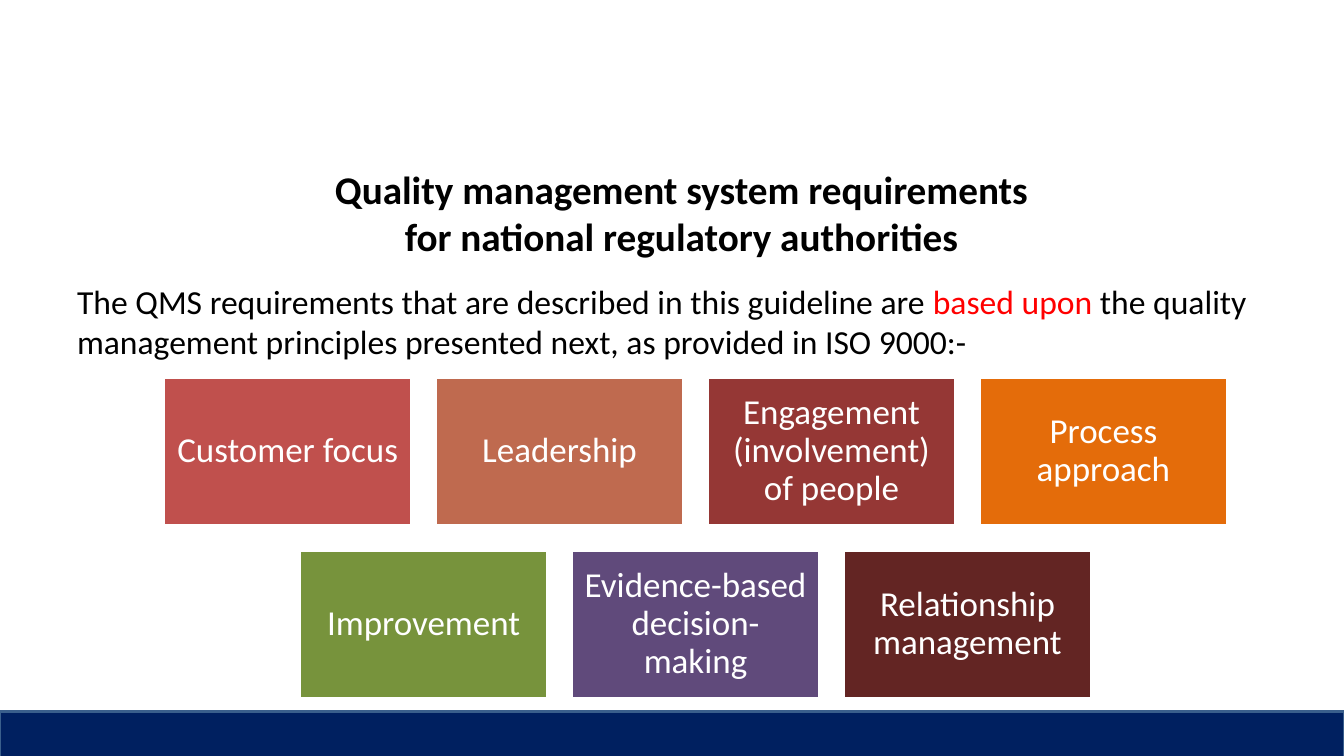
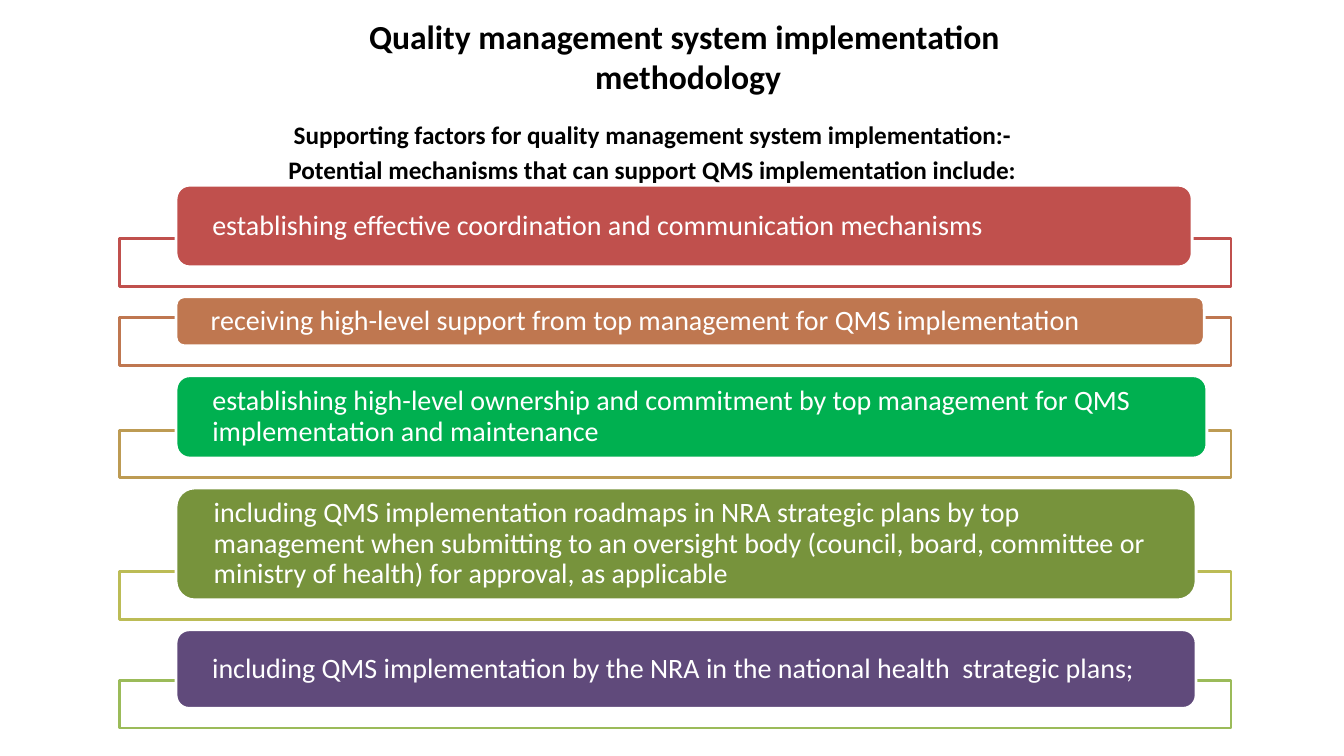
from pptx import Presentation
from pptx.dml.color import RGBColor
from pptx.enum.shapes import MSO_SHAPE
from pptx.enum.text import MSO_ANCHOR, PP_ALIGN
from pptx.util import Inches, Pt

# Boxes are (left, top, width, height) in hundredths of the slide's size.
SLIDE_W, SLIDE_H = Inches(13.33), Inches(7.5)
FONT = "Calibri"
BLACK, WHITE, RED = "000000", "FFFFFF", "FF0000"
NAVY, STEEL = "002060", "3A5F8C"

PRINCIPLES = [
    [("Customer focus", "C0504D"),
     ("Leadership", "BF6A4F"),
     ("Engagement (involvement) of people", "953735"),
     ("Process approach", "E46C0A")],
    [("Improvement", "77933C"),
     ("Evidence-based decision-making", "604A7B"),
     ("Relationship management", "632523")],
]

# Text, bar colour, frame colour, bar width, bar height
MECHANISMS = [
    ("establishing effective coordination and communication mechanisms",
     "C0504D", "C0504D", 75.6, 10.8),
    ("receiving high-level support from top management for QMS implementation",
     "BF7750", "BF7750", 76.5, 6.5),
    ("establishing high-level ownership and commitment by top management for QMS "
     "implementation and maintenance",
     "00B050", "BD9B53", 76.7, 10.9),
    ("including QMS implementation roadmaps in NRA strategic plans by top "
     "management when submitting to an oversight body (council, board, committee or "
     "ministry of health) for approval, as applicable",
     "77933C", "BCBC56", 75.9, 14.8),
    ("including QMS implementation by the NRA in the national health  strategic plans;",
     "604A7B", "9BBB59", 75.9, 10.4),
]


def rgb(color):
    return RGBColor.from_string(color)


def place(box):
    x, y, w, h = box
    return (round(SLIDE_W * x / 100), round(SLIDE_H * y / 100),
            round(SLIDE_W * w / 100), round(SLIDE_H * h / 100))


def add_run(p, text, size, color=BLACK, bold=False):
    r = p.add_run()
    r.text = text
    r.font.name = FONT
    r.font.size = Pt(size)
    r.font.bold = bold
    r.font.color.rgb = rgb(color)


def add_text_box(s, box, anchor=MSO_ANCHOR.TOP):
    tf = s.shapes.add_textbox(*place(box)).text_frame
    tf.word_wrap = True
    tf.vertical_anchor = anchor
    return tf


def add_block(s, kind, box, fill, line=WHITE):
    sp = s.shapes.add_shape(kind, *place(box))
    sp.shadow.inherit = False
    sp.fill.solid()
    sp.fill.fore_color.rgb = rgb(fill)
    sp.line.color.rgb = rgb(line)
    sp.line.width = Pt(2)
    return sp


def add_label(sp, text, size, align, side, edge):
    """Write white text in a shape, with insets at its sides and its top and bottom."""
    tf = sp.text_frame
    tf.word_wrap = True
    tf.vertical_anchor = MSO_ANCHOR.MIDDLE
    tf.margin_left = tf.margin_right = Inches(side)
    tf.margin_top = tf.margin_bottom = Inches(edge)
    p = tf.paragraphs[0]
    p.alignment = align
    p.line_spacing = 0.9
    add_run(p, text, size, WHITE)


def add_title(s, box, lines, size):
    p = add_text_box(s, box, MSO_ANCHOR.MIDDLE).paragraphs[0]
    p.alignment = PP_ALIGN.CENTER
    for i, line in enumerate(lines):
        if i:
            p.add_line_break()
        add_run(p, line, size, bold=True)


def add_body(s, box, paragraphs, size, align=PP_ALIGN.LEFT, bold=False):
    """Write paragraphs, each a list of (text, colour) runs."""
    tf = add_text_box(s, box)
    for i, runs in enumerate(paragraphs):
        p = tf.add_paragraph() if i else tf.paragraphs[0]
        p.alignment = align
        p.space_before = Pt(size * 0.2)
        for text, color in runs:
            add_run(p, text, size, color, bold)


def add_principle_grid(s, box, rows, cell_w=18.4, cell_h=19.6):
    """Spread the rows over the box, with each row centred in it."""
    x, y, w, h = box
    columns = max(len(row) for row in rows)
    step_x = (w - cell_w) / (columns - 1)
    step_y = (h - cell_h) / (len(rows) - 1)
    for i, row in enumerate(rows):
        left = x + (columns - len(row)) * step_x / 2
        for j, (text, color) in enumerate(row):
            cell = (left + j * step_x, y + i * step_y, cell_w, cell_h)
            sp = add_block(s, MSO_SHAPE.RECTANGLE, cell, color)
            add_label(sp, text, 25, PP_ALIGN.CENTER, 0.1, 0.1)


def add_mechanism_list(s, box, items, indent=4.2, frame_h=6.3, overlap=3.7):
    """Stack bars at equal gaps, each overlapping the top of its outlined frame."""
    x, y, w, h = box
    bars_h = sum(item[-1] for item in items)
    gap = (h - bars_h - (frame_h - overlap)) / (len(items) - 1)
    for text, color, frame_color, bar_w, bar_h in items:
        frame = (x, y + bar_h - overlap, w, frame_h)
        add_block(s, MSO_SHAPE.RECTANGLE, frame, WHITE, frame_color)
        bar = (x + indent, y, bar_w, bar_h)
        sp = add_block(s, MSO_SHAPE.ROUNDED_RECTANGLE, bar, color)
        add_label(sp, text, 20, PP_ALIGN.LEFT, 0.32, 0)
        y += bar_h + gap


def build_principles(s):
    add_title(s, (5.7, 19.7, 90, 16.7),
              ["Quality management system requirements",
               "for national regulatory authorities"], 28)
    add_body(s, (5, 36.5, 90, 13),
             [[("The QMS requirements that are described in this guideline are ", BLACK),
               ("based upon ", RED),
               ("the quality management principles presented next, "
                "as provided in ISO 9000:-", BLACK)]], 24)
    add_principle_grid(s, (12.2, 49.9, 79.1, 42.5), PRINCIPLES)
    add_block(s, MSO_SHAPE.RECTANGLE, (0, 94.1, 100, 6.2), NAVY, STEEL)


def build_methodology(s):
    add_title(s, (14, 0, 74.4, 14.8),
              ["Quality management system implementation ", "methodology"], 24)
    add_body(s, (9.8, 15.1, 77.5, 10),
             [[("Supporting factors for quality management system implementation:-", BLACK)],
              [("Potential mechanisms that can support QMS implementation include:", BLACK)]],
             18, PP_ALIGN.CENTER, bold=True)
    add_mechanism_list(s, (8.9, 24.5, 82.7, 71.8), MECHANISMS)


def main():
    prs = Presentation()
    prs.slide_width, prs.slide_height = SLIDE_W, SLIDE_H
    for build in (build_principles, build_methodology):
        build(prs.slides.add_slide(prs.slide_layouts[6]))
    prs.save("out.pptx")


if __name__ == "__main__":
    main()
